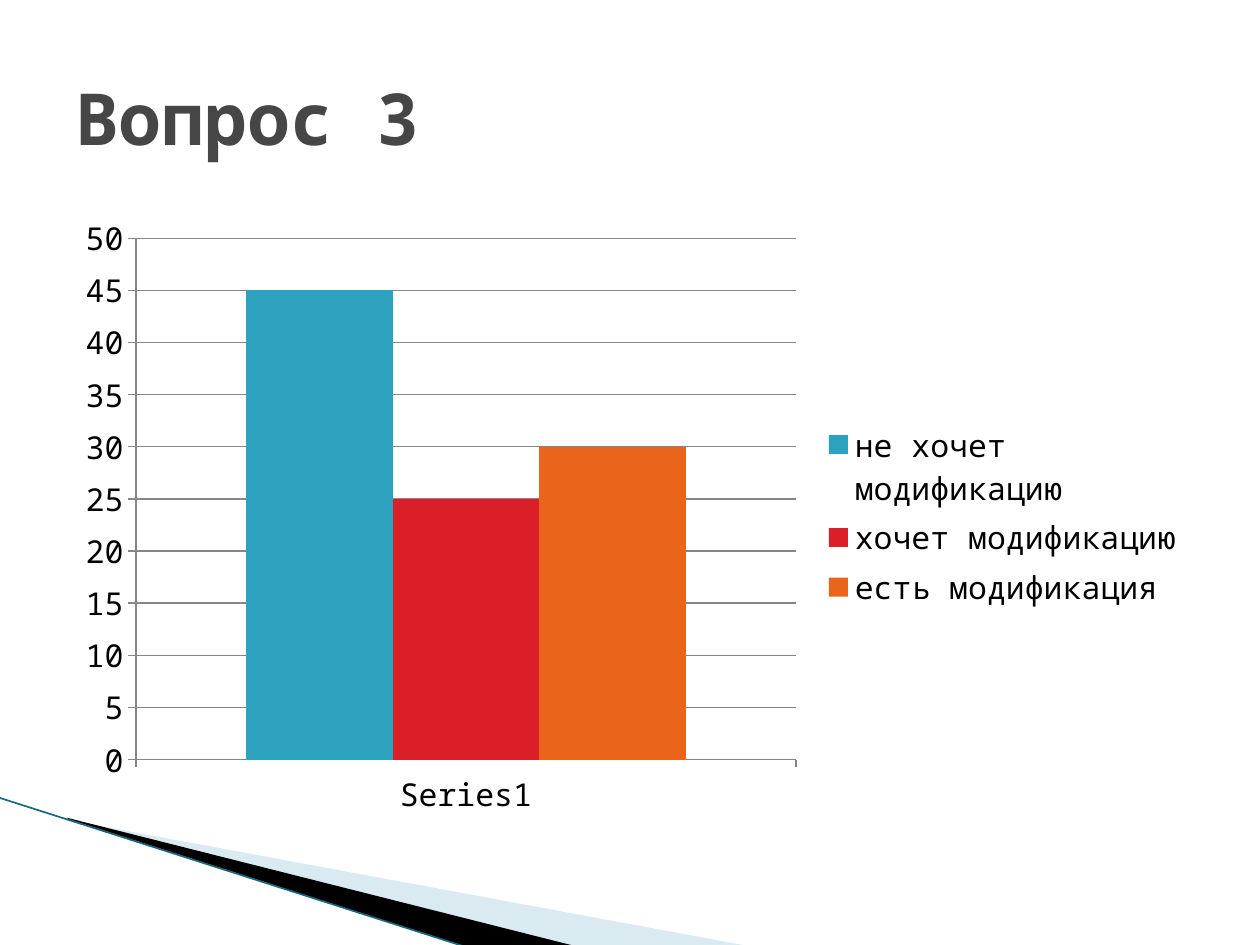
from lxml import etree
from pptx import Presentation
from pptx.chart.data import CategoryChartData
from pptx.dml.color import RGBColor
from pptx.enum import chart as charts, shapes, text
from pptx.oxml.ns import qn
from pptx.util import Inches, Pt

FONT = "Noto Sans Mono"
BLACK = RGBColor(0x00, 0x00, 0x00)
TITLE_GRAY = RGBColor(0x46, 0x46, 0x46)
AXIS_GRAY = RGBColor(0x86, 0x86, 0x86)
PALE_BLUE = RGBColor(0xA0, 0xCB, 0xDC)
DARK_TEAL = RGBColor(0x16, 0x69, 0x7B)

TITLE = "Вопрос 3"
CATEGORY = "Series1"
ANSWERS = [
    ("не хочет модификацию", 45, RGBColor(0x2D, 0xA2, 0xBF)),
    ("хочет модификацию", 25, RGBColor(0xDA, 0x1F, 0x28)),
    ("есть модификация", 30, RGBColor(0xEB, 0x64, 0x1B)),
]
# Corner points, colour, opacity in percent
WEDGES = [
    ([(0.55, 6.51), (5.95, 7.51), (4.56, 7.51), (0.55, 6.5)], PALE_BLUE, 40),
    ([(0.53, 6.49), (4.57, 7.51), (3.72, 7.52), (0.54, 6.5)], BLACK, 100),
]


def add_wedge(slide, points, color, opacity):
    start, *rest = points
    builder = slide.shapes.build_freeform(
        *(Inches(value) for value in start), scale=1.0)
    builder.add_line_segments([(Inches(x), Inches(y)) for x, y in rest])
    wedge = builder.convert_to_shape()
    wedge.shadow.inherit = False
    wedge.fill.solid()
    wedge.fill.fore_color.rgb = color
    wedge.line.fill.background()
    if opacity < 100:
        color_node = wedge._element.spPr.find(".//" + qn("a:srgbClr"))
        etree.SubElement(color_node, qn("a:alpha"), val=str(opacity * 1000))


def add_edge(slide):
    edge = slide.shapes.add_connector(
        shapes.MSO_CONNECTOR.STRAIGHT,
        Inches(-0.01), Inches(6.33), Inches(3.71), Inches(7.52))
    edge.line.color.rgb = DARK_TEAL
    edge.line.width = Pt(0.95)
    etree.SubElement(edge._element.spPr, qn("a:effectLst"))


def add_answers_chart(slide):
    data = CategoryChartData()
    data.categories = [CATEGORY]
    for name, value, _ in ANSWERS:
        data.add_series(name, [value])
    chart = slide.shapes.add_chart(
        charts.XL_CHART_TYPE.COLUMN_CLUSTERED,
        Inches(0.5), Inches(1.62), Inches(9), Inches(4.95), data).chart
    chart.has_title = False
    chart.font.name = FONT
    chart.font.size = Pt(18)
    chart.font.color.rgb = BLACK

    plot = chart.plots[0]
    plot.vary_by_categories = False
    plot.gap_width = 150
    plot.overlap = 0
    for series, (_, _, color) in zip(plot.series, ANSWERS):
        series.format.fill.solid()
        series.format.fill.fore_color.rgb = color

    values = chart.value_axis
    values.minimum_scale, values.maximum_scale, values.major_unit = 0, 50, 5
    values.has_major_gridlines = True
    for axis in (chart.category_axis, values):
        axis.major_tick_mark = charts.XL_TICK_MARK.OUTSIDE
    for lined in (chart.category_axis, values, values.major_gridlines):
        lined.format.line.color.rgb = AXIS_GRAY
        lined.format.line.width = Pt(0.75)

    chart.has_legend = True
    chart.legend.position = charts.XL_LEGEND_POSITION.RIGHT
    chart.legend.include_in_layout = False


def add_title(slide):
    box = slide.shapes.add_textbox(
        Inches(0.5), Inches(0.3), Inches(9), Inches(1.25))
    frame = box.text_frame
    frame.word_wrap = True
    frame.vertical_anchor = text.MSO_ANCHOR.MIDDLE
    para = frame.paragraphs[0]
    para.text = TITLE
    para.font.name = FONT
    para.font.size = Pt(41)
    para.font.bold = True
    para.font.color.rgb = TITLE_GRAY


def main():
    deck = Presentation()
    deck.slide_width, deck.slide_height = Inches(10), Inches(7.5)
    slide = deck.slides.add_slide(deck.slide_layouts[6])
    for points, color, opacity in WEDGES:
        add_wedge(slide, points, color, opacity)
    add_edge(slide)
    add_answers_chart(slide)
    add_title(slide)
    deck.save("out.pptx")


if __name__ == "__main__":
    main()
